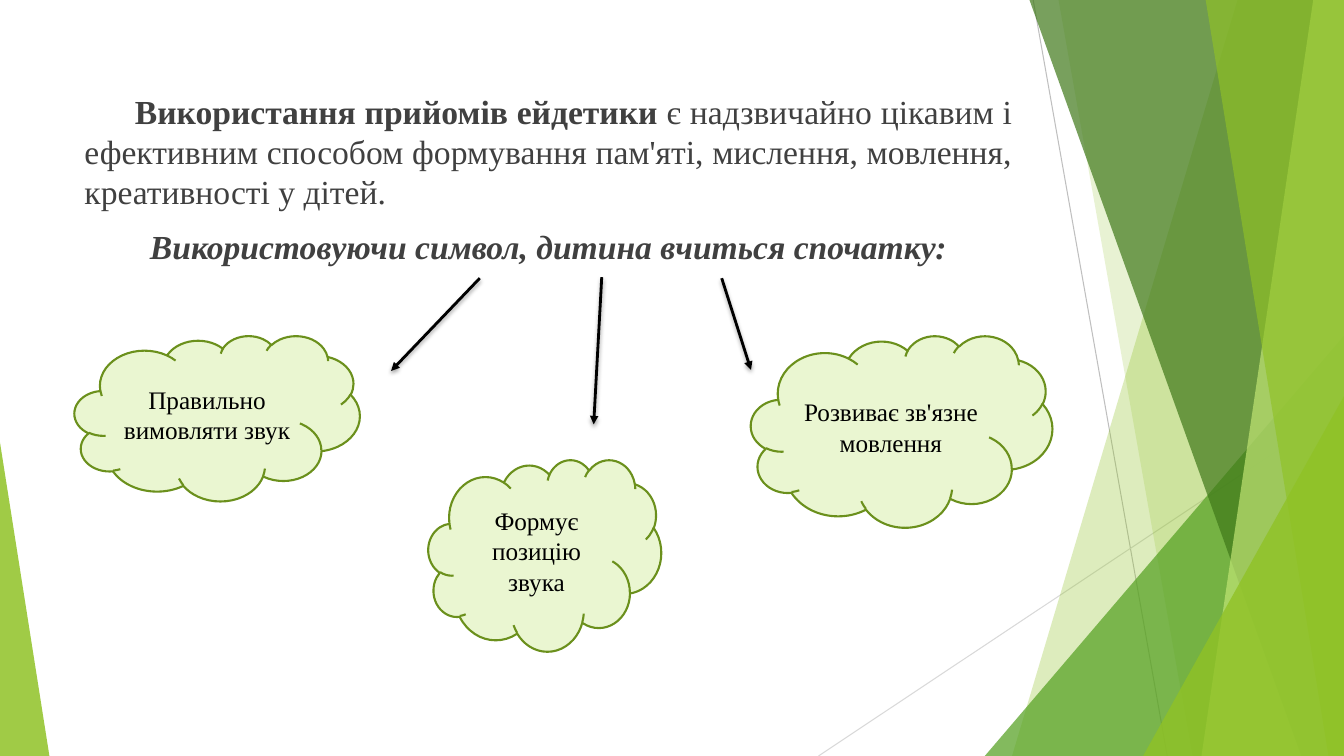
"""Builds a slide on what children learn from symbols in eidetic techniques."""
from dataclasses import dataclass

from lxml.etree import SubElement
from pptx import Presentation
from pptx.dml.color import RGBColor
from pptx.enum.shapes import MSO_CONNECTOR as Link, MSO_SHAPE as Preset
from pptx.enum.text import MSO_ANCHOR as Anchor, PP_ALIGN as Align
from pptx.oxml.ns import qn
from pptx.shapes.autoshape import Shape
from pptx.shapes.connector import Connector
from pptx.slide import Slide
from pptx.text.text import _Paragraph as Paragraph
from pptx.util import Pt

WIDTH, HEIGHT = 960, 540
BAND_TOP = -0.72
FONT = "Times New Roman"
BLACK = RGBColor(0x00, 0x00, 0x00)
CHARCOAL = RGBColor(0x40, 0x40, 0x40)
GREY = RGBColor(0xBF, 0xBF, 0xBF)
PALE_GREY = RGBColor(0xD9, 0xD9, 0xD9)
LIME = RGBColor(0x90, 0xC2, 0x26)
PALE_LIME = RGBColor(0xC0, 0xE4, 0x74)
GREEN = RGBColor(0x54, 0xA0, 0x21)
DARK_GREEN = RGBColor(0x3F, 0x78, 0x19)
CLOUD_FILL = RGBColor(0xEA, 0xF6, 0xD1)
CLOUD_LINE = RGBColor(0x6B, 0x90, 0x1C)


@dataclass(frozen=True)
class Band:
    """A strip from a slanted left edge to the right side of the slide."""
    top_x: float
    bottom_x: float
    color: RGBColor
    opacity: int


@dataclass(frozen=True)
class Corner:
    """A triangle standing on the bottom edge of the slide."""
    left: float
    top: float
    width: float
    apex: float
    color: RGBColor
    opacity: int


@dataclass(frozen=True)
class Stroke:
    """A straight line between two points."""
    x1: float
    y1: float
    x2: float
    y2: float
    color: RGBColor
    weight: float


@dataclass(frozen=True)
class Cloud:
    """A cloud holding one skill."""
    left: float
    top: float
    width: float
    height: float
    text: str


RULES = (
    Stroke(738, 0, 833.76, HEIGHT, GREY, 0.75),
    Stroke(WIDTH, 290.16, 584.64, HEIGHT, PALE_GREY, 0.75),
)
FACETS = (
    Band(884.16, 722.88, LIME, 30),
    Band(756, 851.76, LIME, 20),
    Corner(703.44, 239.76, 256.56, 1, GREEN, 72),
    Band(735.12, 929.52, DARK_GREEN, 70),
    Band(938.16, 858.24, PALE_LIME, 70),
    Band(861.12, 948.96, LIME, 65),
    Corner(816.48, 282.96, 143.52, 1, LIME, 80),
    Corner(0, 316.08, 35.28, 0, LIME, 85),
)
CLOUDS = (
    Cloud(53.28, 239.76, 203.76, 118.08, "Правильно вимовляти звук"),
    Cloud(306, 328.32, 166.32, 136.8, "Формує позицію звука"),
    Cloud(536.4, 239.76, 215.28, 136.8, "Розвиває зв'язне мовлення"),
)
ARROWS = (
    Stroke(342.72, 198.72, 279.36, 264.96, BLACK, 2),
    Stroke(429.84, 198, 424.08, 303.12, BLACK, 2),
    Stroke(515.52, 198.72, 536.4, 264.24, BLACK, 2),
)


def paint(shape: Shape, color: RGBColor, opacity: int) -> None:
    """Give a shape a translucent fill without outline or shadow."""
    shape.shadow.inherit = False
    shape.fill.solid()
    shape.fill.fore_color.rgb = color
    shape.line.fill.background()
    tint = shape.element.spPr.find(qn("a:solidFill")).find(qn("a:srgbClr"))
    SubElement(tint, qn("a:alpha"), val=str(opacity * 1000))


def draw_facet(page: Slide, facet: Band | Corner) -> None:
    """Draw one translucent part of the background."""
    if isinstance(facet, Band):
        builder = page.shapes.build_freeform(Pt(facet.top_x), Pt(BAND_TOP))
        outline = ((WIDTH, BAND_TOP), (WIDTH, HEIGHT), (facet.bottom_x, HEIGHT))
        builder.add_line_segments([(Pt(x), Pt(y)) for x, y in outline], close=True)
        shape = builder.convert_to_shape()
    else:
        shape = page.shapes.add_shape(
            Preset.ISOSCELES_TRIANGLE, Pt(facet.left), Pt(facet.top),
            Pt(facet.width), Pt(HEIGHT - facet.top))
        shape.adjustments[0] = facet.apex
    paint(shape, facet.color, facet.opacity)


def draw_stroke(page: Slide, stroke: Stroke) -> Connector:
    """Draw a straight line with an empty effect list."""
    line = page.shapes.add_connector(
        Link.STRAIGHT, Pt(stroke.x1), Pt(stroke.y1), Pt(stroke.x2), Pt(stroke.y2))
    line.line.color.rgb = stroke.color
    line.line.width = Pt(stroke.weight)
    SubElement(line.element.spPr, qn("a:effectLst"))
    return line


def draw_arrow(page: Slide, stroke: Stroke) -> None:
    """Draw a line with an arrowhead and a soft shadow below."""
    properties = draw_stroke(page, stroke).element.spPr
    SubElement(properties.find(qn("a:ln")), qn("a:tailEnd"), type="triangle")
    shadow = SubElement(
        properties.find(qn("a:effectLst")), qn("a:outerShdw"),
        blurRad=str(Pt(3)), dist=str(Pt(2)), dir="5400000", rotWithShape="0")
    tint = SubElement(shadow, qn("a:srgbClr"), val=str(BLACK))
    SubElement(tint, qn("a:alpha"), val="35000")


def style(para: Paragraph, size: int, color: RGBColor, align: Align) -> None:
    """Set the font and alignment of a paragraph."""
    para.alignment = align
    para.font.name = FONT
    para.font.size = Pt(size)
    para.font.color.rgb = color


def draw_cloud(page: Slide, cloud: Cloud) -> None:
    """Draw a cloud with centred text."""
    shape = page.shapes.add_shape(
        Preset.CLOUD, Pt(cloud.left), Pt(cloud.top), Pt(cloud.width), Pt(cloud.height))
    shape.shadow.inherit = False
    shape.fill.solid()
    shape.fill.fore_color.rgb = CLOUD_FILL
    shape.line.color.rgb = CLOUD_LINE
    shape.line.width = Pt(1.5)
    frame = shape.text_frame
    frame.word_wrap = True
    frame.vertical_anchor = Anchor.MIDDLE
    frame.text = cloud.text
    style(frame.paragraphs[0], 18, BLACK, Align.CENTER)


def draw_body(page: Slide) -> None:
    """Write the introduction and the lead-in to the clouds."""
    box = page.shapes.add_textbox(Pt(53.28), Pt(61.2), Pt(676.8), Pt(414))
    frame = box.text_frame
    frame.word_wrap = True
    intro, lead = frame.paragraphs[0], frame.add_paragraph()
    for para, align in ((intro, Align.JUSTIFY), (lead, Align.CENTER)):
        style(para, 24, CHARCOAL, align)
        para.space_before = Pt(10)
    intro._p.get_or_add_pPr().set("indent", str(Pt(36)))
    span = intro.add_run()
    span.text = "Використання прийомів ейдетики "
    span.font.bold = True
    intro.add_run().text = (
        "є надзвичайно цікавим і ефективним способом формування пам'яті, "
        "мислення, мовлення, креативності у дітей.")
    lead.text = "Використовуючи символ, дитина вчиться спочатку:"
    lead.font.bold = lead.font.italic = True


def main() -> None:
    """Build and save the deck."""
    deck = Presentation()
    deck.slide_width, deck.slide_height = Pt(WIDTH), Pt(HEIGHT)
    page = deck.slides.add_slide(deck.slide_layouts[6])
    for rule in RULES:
        draw_stroke(page, rule)
    for facet in FACETS:
        draw_facet(page, facet)
    draw_body(page)
    for cloud in CLOUDS:
        draw_cloud(page, cloud)
    for arrow in ARROWS:
        draw_arrow(page, arrow)
    deck.save("out.pptx")


if __name__ == "__main__":
    main()
